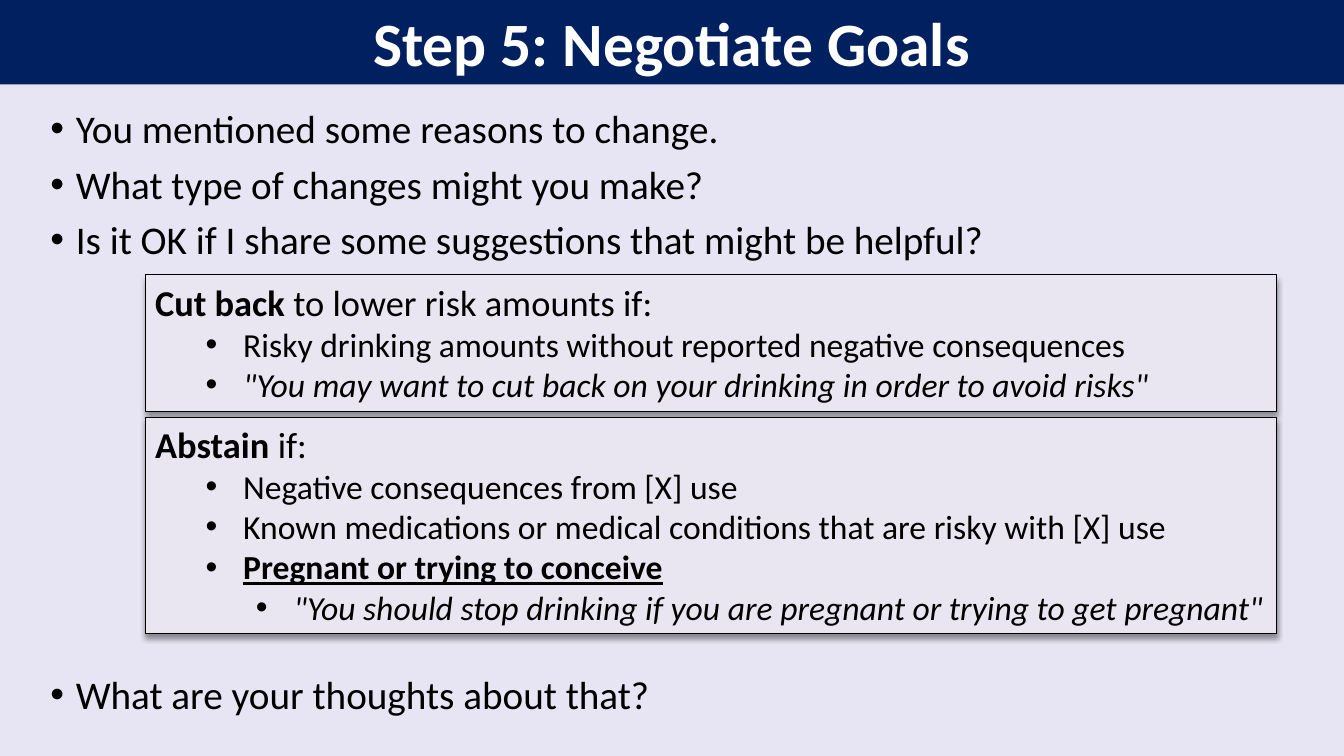
from lxml.etree import SubElement
from pptx import Presentation
from pptx.dml.color import RGBColor
from pptx.enum.shapes import MSO_SHAPE
from pptx.enum.text import MSO_ANCHOR, PP_ALIGN
from pptx.oxml.ns import qn
from pptx.util import Cm, Pt

BLACK = RGBColor(0x00, 0x00, 0x00)
WHITE = RGBColor(0xFF, 0xFF, 0xFF)
NAVY = RGBColor(0x00, 0x20, 0x60)
LAVENDER = RGBColor(0xE7, 0xE5, 0xF3)
BOX_FILL = RGBColor(0xE9, 0xE6, 0xF2)

SLIDE_WIDTH, SLIDE_HEIGHT = 33.87, 19.05

# Paragraph styles: text size, then bullet text start and hanging indent in cm
STYLES = {
    "title": {"size": 44, "align": PP_ALIGN.CENTER, "color": WHITE},
    "question": {"size": 28, "start": 0.64, "hang": 0.64, "before": 6},
    "closing": {"size": 28, "start": 0.64, "hang": 0.64, "before": 9, "spacing": 1.2},
    "heading": {"size": 26},
    "point": {"size": 24, "start": 2.22, "hang": 0.95, "level": 1},
    "subpoint": {"size": 24, "start": 3.49, "hang": 0.95, "level": 2},
}
PLAIN, BOLD, ITALIC = {}, {"bold": True}, {"italic": True}
BOLD_UNDERLINED = {"bold": True, "underline": True}

# Each paragraph: style, then its runs as (text, format)
TITLE = [("title", [("Step 5: Negotiate Goals", BOLD)])]
QUESTIONS = [
    ("question", [("You mentioned some reasons to change.", PLAIN)]),
    ("question", [("What type of changes might you make?", PLAIN)]),
    ("question", [("Is it OK if I share some suggestions that might be helpful?", PLAIN)]),
]
CLOSING = [("closing", [("What are your thoughts about that?", PLAIN)])]
CUT_BACK = [
    ("heading", [("Cut back ", BOLD), ("to lower risk amounts if:", PLAIN)]),
    ("point", [("Risky drinking amounts without reported negative consequences", PLAIN)]),
    ("point", [('"You may want to cut back on your drinking in order to avoid risks"', ITALIC)]),
]
ABSTAIN = [
    ("heading", [("Abstain ", BOLD), ("if:", PLAIN)]),
    ("point", [("Negative consequences from [X] use", PLAIN)]),
    ("point", [("Known medications or medical conditions that are risky with [X] use", PLAIN)]),
    ("point", [("Pregnant or trying to conceive", BOLD_UNDERLINED)]),
    ("subpoint", [('"You should stop drinking if you are pregnant or trying to get pregnant"', ITALIC)]),
]

# Content with left, top, width, height in cm
TEXT_AREAS = [
    (QUESTIONS, (1.02, 2.51, 30.81, 3.94)),
    (CLOSING, (1.02, 16.54, 29.29, 1.73)),
]
BOX_LEFT, BOX_TOP, BOX_WIDTH, BOX_GAP = 3.66, 6.93, 28.52, 0.15
BOXES = [(CUT_BACK, 3.43), (ABSTAIN, 5.46)]
BANNER_HEIGHT = 2.13


def add_bullet(paragraph, start, hang):
    properties = paragraph._p.get_or_add_pPr()
    properties.set("marL", str(Cm(start)))
    properties.set("indent", str(-Cm(hang)))
    SubElement(properties, qn("a:buFont"), typeface="Arial")
    SubElement(properties, qn("a:buChar"), char="•")


def write_text(shape, content, anchor=MSO_ANCHOR.TOP):
    frame = shape.text_frame
    frame.word_wrap = True
    frame.vertical_anchor = anchor
    for index, (style_name, runs) in enumerate(content):
        style = STYLES[style_name]
        paragraph = frame.add_paragraph() if index else frame.paragraphs[0]
        layout = {
            "alignment": style.get("align", PP_ALIGN.LEFT),
            "level": style.get("level", 0),
            "space_before": Pt(style.get("before", 0)),
            "line_spacing": style.get("spacing", 1.0),
        }
        for name, value in layout.items():
            setattr(paragraph, name, value)
        if "start" in style:
            add_bullet(paragraph, style["start"], style["hang"])
        for text, run_format in runs:
            run = paragraph.add_run()
            run.text = text
            font_format = {"name": "Calibri", "size": Pt(style["size"]), **run_format}
            for name, value in font_format.items():
                setattr(run.font, name, value)
            run.font.color.rgb = style.get("color", BLACK)


def add_rectangle(slide, bounds, fill):
    shape = slide.shapes.add_shape(MSO_SHAPE.RECTANGLE, *map(Cm, bounds))
    shape.shadow.inherit = False
    shape.fill.solid()
    shape.fill.fore_color.rgb = fill
    return shape


def add_drop_shadow(shape):
    effects = shape._element.spPr.find(qn("a:effectLst"))
    shadow = SubElement(effects, qn("a:outerShdw"), blurRad=str(Pt(4)),
                        dist=str(Pt(3)), dir="5400000", rotWithShape="0")
    color = SubElement(shadow, qn("a:srgbClr"), val=str(BLACK))
    SubElement(color, qn("a:alpha"), val="40000")


def main():
    presentation = Presentation()
    presentation.slide_width = Cm(SLIDE_WIDTH)
    presentation.slide_height = Cm(SLIDE_HEIGHT)
    slide = presentation.slides.add_slide(presentation.slide_layouts[6])
    slide.background.fill.solid()
    slide.background.fill.fore_color.rgb = LAVENDER

    for content, bounds in TEXT_AREAS:
        write_text(slide.shapes.add_textbox(*map(Cm, bounds)), content)

    top = BOX_TOP
    for content, height in BOXES:
        box = add_rectangle(slide, (BOX_LEFT, top, BOX_WIDTH, height), BOX_FILL)
        box.line.color.rgb = BLACK
        box.line.width = Pt(0.75)
        add_drop_shadow(box)
        write_text(box, content)
        top += height + BOX_GAP

    banner = add_rectangle(slide, (0, 0, SLIDE_WIDTH, BANNER_HEIGHT), NAVY)
    banner.line.fill.background()
    write_text(banner, TITLE, MSO_ANCHOR.MIDDLE)

    presentation.save("out.pptx")


if __name__ == "__main__":
    main()
